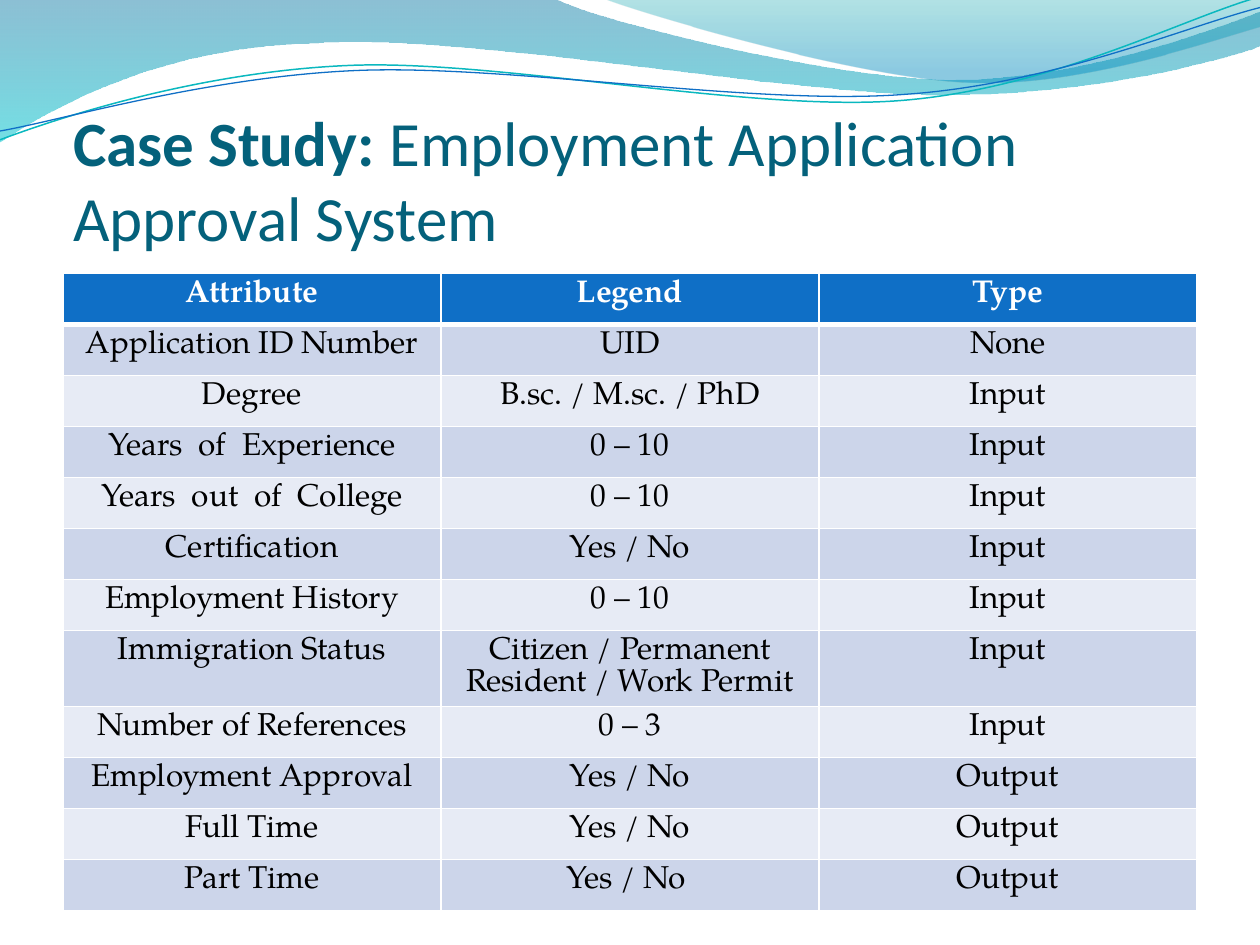
import pptx
import pptx.dml.color
import pptx.enum.text
import pptx.oxml
import pptx.oxml.ns
import pptx.util
from lxml import etree
from pptx.util import Inches

COLORS = {
    "title": "04617B", "header": "0F6FC6", "band_dark": "CCD5EA",
    "band_light": "E7EBF5", "white": "FFFFFF", "black": "000000",
    "teal_line": "0AB8BF", "blue_line": "0F6FC6",
    "wave_top": "0074A1", "wave_bottom": "00C6CF",
    "crest_top": "00A1A9", "crest_bottom": "008BBF",
}
TABLE_FONT = "TeX Gyre Pagella"
ROWS = [
    ("Attribute", "Legend", "Type"),
    ("Application ID Number", "UID", "None"),
    ("Degree", "B.sc. / M.sc. / PhD", "Input"),
    ("Years  of  Experience", "0 – 10", "Input"),
    ("Years  out  of  College", "0 – 10", "Input"),
    ("Certification", "Yes / No", "Input"),
    ("Employment History", "0 – 10", "Input"),
    ("Immigration Status", "Citizen / Permanent Resident / Work Permit", "Input"),
    ("Number of References", "0 – 3", "Input"),
    ("Employment Approval", "Yes / No", "Output"),
    ("Full Time", "Yes / No", "Output"),
    ("Part Time", "Yes / No ", "Output"),
]
WAVE = [
    (0, 0), (4.4, -0.01),
    (4.76, 0.17, 6.64, 0.63, 7.58, 0.63), (8.53, 0.63, 9.58, 0.26, 10, 0.09),
    (10.01, 0.36),
    (9.83, 0.44, 8.7, 0.76, 7.46, 0.75), (6.22, 0.75, 3.82, 0.28, 2.57, 0.34),
    (1.29, 0.36, 0.46, 0.83, -0.01, 1.13), (0, 0),
]
CREST = [
    (4.79, -0.01),
    (5.09, 0.11, 6.82, 0.62, 7.69, 0.65), (8.56, 0.69, 9.61, 0.32, 10, 0.21),
    (10, 0), (4.79, -0.01),
]
TEAL_CURVE = [
    (0, 1.11), (0.48, 0.93, 1.58, 0.57, 2.77, 0.52),
    (3.95, 0.47, 5.93, 0.89, 7.13, 0.8), (8.33, 0.71, 9.38, 0.15, 9.98, -0.02),
]
BLUE_CURVE = [
    (0, 1.04), (0.47, 0.96, 1.64, 0.61, 2.83, 0.56),
    (4.03, 0.51, 5.97, 0.84, 7.17, 0.75), (8.36, 0.67, 9.41, 0.21, 10, 0.06),
]


def rgb(name):
    """Return the named colour."""
    return pptx.dml.color.RGBColor.from_string(COLORS[name])


def bend_segments(shape, segments):
    """Merge the three line steps of each cubic segment into one Bézier curve."""
    lines = iter(list(shape.element.iter(pptx.oxml.ns.qn("a:lnTo"))))
    for segment in segments[1:]:
        steps = [next(lines) for _ in range(len(segment) // 2)]
        if len(steps) == 1:
            continue
        curve = etree.Element(pptx.oxml.ns.qn("a:cubicBezTo"))
        steps[0].addprevious(curve)
        for step in steps:
            curve.append(step[0])
            step.getparent().remove(step)


def add_outline(slide, segments, close):
    """Add a freeform of straight and cubic segments."""
    points = [(Inches(segment[index]), Inches(segment[index + 1]))
              for segment in segments for index in range(0, len(segment), 2)]
    builder = slide.shapes.build_freeform(*points[0])
    builder.add_line_segments(points[1:], close=close)
    shape = builder.convert_to_shape()
    shape.shadow.inherit = False
    bend_segments(shape, segments)
    return shape


def add_wave(slide, segments, stops):
    """Add a filled wave with a translucent vertical gradient."""
    shape = add_outline(slide, segments, True)
    shape.line.fill.background()
    shape.fill.gradient()
    shape.fill.gradient_angle = 270
    for stop, (position, color, opacity) in zip(shape.fill.gradient_stops, stops):
        stop.position = position
        stop.color.rgb = rgb(color)
    elements = shape.element.iter(pptx.oxml.ns.qn("a:srgbClr"))
    for element, (position, color, opacity) in zip(elements, stops):
        alpha = etree.SubElement(element, pptx.oxml.ns.qn("a:alpha"))
        alpha.set("val", str(opacity * 1000))


def add_curve(slide, segments, color, width):
    """Add an open curved line."""
    shape = add_outline(slide, segments, False)
    shape.fill.background()
    shape.line.color.rgb = rgb(color)
    shape.line.width = pptx.util.Pt(width)


def format_run(run, font, size, color, bold):
    """Set the font of a run."""
    run.font.name = font
    run.font.size = pptx.util.Pt(size)
    run.font.color.rgb = rgb(color)
    run.font.bold = bold


def set_title(slide):
    """Place and write the title."""
    title = slide.shapes.title
    title.left, title.top = Inches(0.58), Inches(0.77)
    title.width, title.height = Inches(9), Inches(1.25)
    frame = title.text_frame
    frame.auto_size = pptx.enum.text.MSO_AUTO_SIZE.NONE
    frame.word_wrap = True
    frame.vertical_anchor = pptx.enum.text.MSO_ANCHOR.BOTTOM
    frame.margin_left = frame.margin_right = frame.margin_bottom = 0
    frame.margin_top = Inches(0.05)
    paragraph = frame.paragraphs[0]
    paragraph.alignment = pptx.enum.text.PP_ALIGN.LEFT
    for text, bold in (("Case Study:", True), (" Employment Application Approval System", False)):
        run = paragraph.add_run()
        run.text = text
        format_run(run, "Calibri", 36, "title", bold)


def set_borders(cell, widths):
    """Draw white borders of the given widths around a cell."""
    properties = cell._tc.get_or_add_tcPr()
    for index, (side, width) in enumerate(widths.items()):
        line = pptx.oxml.parse_xml(
            f'<a:ln{side} {pptx.oxml.ns.nsdecls("a")} w="{pptx.util.Pt(width)}">'
            f'<a:solidFill><a:srgbClr val="{COLORS["white"]}"/></a:solidFill></a:ln{side}>')
        properties.insert(index, line)


def add_attribute_table(slide):
    """Add the banded table of attributes."""
    height = Inches(4.86)
    table = slide.shapes.add_table(
        len(ROWS), 3, Inches(0.5), Inches(2.17), Inches(9), height).table
    table.horz_banding = False
    for row_index, texts in enumerate(ROWS):
        table.rows[row_index].height = height // len(ROWS)
        header = row_index == 0
        band = "band_dark" if row_index % 2 else "band_light"
        for column_index, text in enumerate(texts):
            cell = table.cell(row_index, column_index)
            cell.fill.solid()
            cell.fill.fore_color.rgb = rgb("header" if header else band)
            set_borders(cell, {"L": 1, "R": 1, "T": 3 if row_index == 1 else 1,
                               "B": 3 if header else 1})
            paragraph = cell.text_frame.paragraphs[0]
            paragraph.text = text
            paragraph.alignment = pptx.enum.text.PP_ALIGN.CENTER
            format_run(paragraph.runs[0], TABLE_FONT, 18,
                       "white" if header else "black", header)


def main():
    """Build the slide and save it."""
    presentation = pptx.Presentation()
    presentation.slide_width, presentation.slide_height = Inches(10), Inches(7.5)
    slide = presentation.slides.add_slide(presentation.slide_layouts[5])
    add_wave(slide, WAVE, [(0, "wave_top", 45), (1, "wave_bottom", 55)])
    add_wave(slide, CREST, [(0, "crest_top", 30), (0.8, "crest_bottom", 45)])
    add_curve(slide, TEAL_CURVE, "teal_line", 0.85)
    add_curve(slide, BLUE_CURVE, "blue_line", 0.75)
    set_title(slide)
    add_attribute_table(slide)
    presentation.save("out.pptx")


if __name__ == "__main__":
    main()
